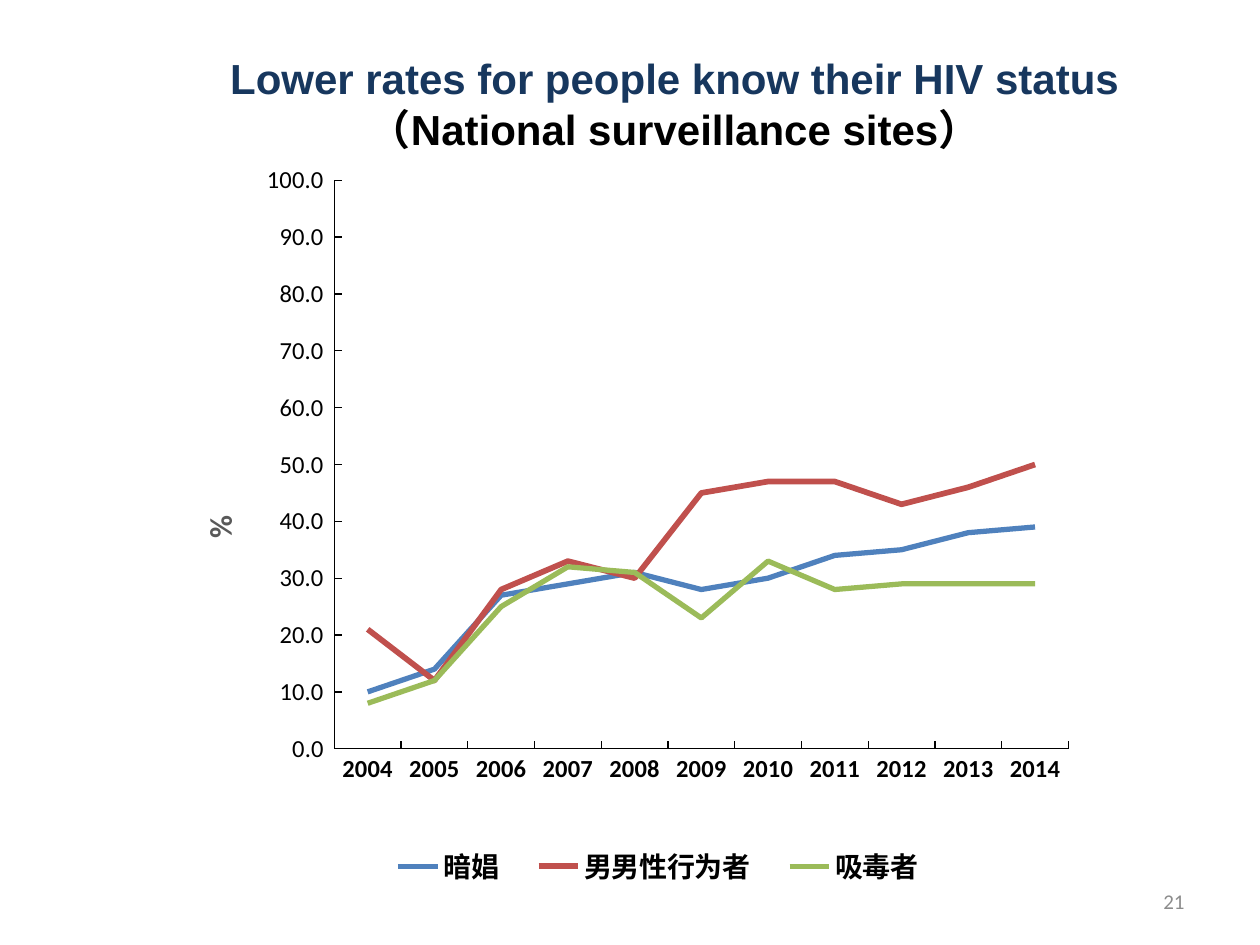
from dataclasses import dataclass

from lxml.etree import SubElement
from pptx import Presentation
from pptx.chart.data import CategoryChartData
from pptx.dml.color import RGBColor
from pptx.enum.chart import XL_CHART_TYPE, XL_LEGEND_POSITION, XL_TICK_MARK
from pptx.enum.text import MSO_ANCHOR, PP_ALIGN
from pptx.oxml import parse_xml
from pptx.oxml.ns import nsdecls, qn
from pptx.util import Inches, Pt


@dataclass(frozen=True)
class Theme:
    heading: str = "17375E"
    ink: str = "000000"
    axis_title: str = "595959"
    page_number: str = "8C8C8C"
    series: tuple = ("4F81BD", "C0504D", "9BBB59")
    title_size: int = 24
    percent_size: int = 18
    legend_size: int = 16
    axis_size: int = 14
    page_size: int = 12
    title_font: str = "Arial"
    body_font: str = "Calibri"
    chinese_font: str = "Noto Sans CJK SC"


def format_font(font, color, **values):
    for name, value in values.items():
        setattr(font, name, value)
    font.color.rgb = RGBColor.from_string(color)


def manual_layout(**values):
    fields = "".join(f'<c:{name} val="{value}"/>' for name, value in values.items())
    return parse_xml(
        f'<c:layout {nsdecls("c")}><c:manualLayout>{fields}</c:manualLayout></c:layout>'
    )


theme = Theme()
presentation = Presentation()
presentation.slide_width = Inches(10)
presentation.slide_height = Inches(7.5)
slide = presentation.slides.add_slide(presentation.slide_layouts[5])

chart_data = CategoryChartData(number_format="0.0_ ")
chart_data.categories = [str(year) for year in range(2004, 2015)]
rates = {
    "暗娼": (10, 14, 27, 29, 31, 28, 30, 34, 35, 38, 39),
    "男男性行为者": (21, 12, 28, 33, 30, 45, 47, 47, 43, 46, 50),
    "吸毒者": (8, 12, 25, 32, 31, 23, 33, 28, 29, 29, 29),
}
for group, values in rates.items():
    chart_data.add_series(group, values)

chart = slide.shapes.add_chart(
    XL_CHART_TYPE.LINE, Inches(1.38), Inches(1.12), Inches(7.32), Inches(6.09), chart_data
).chart
chart.has_title = False
format_font(chart.font, theme.ink, name=theme.body_font, size=Pt(theme.axis_size))
plot = chart.plots[0]
plot.vary_by_categories = False
for series, color, width in zip(plot.series, theme.series, (3, 3.25, 3)):
    series.smooth = False
    series.format.line.color.rgb = RGBColor.from_string(color)
    series.format.line.width = Pt(width)

for axis, bold in ((chart.category_axis, True), (chart.value_axis, False)):
    axis_format = {
        "has_major_gridlines": False,
        "major_tick_mark": XL_TICK_MARK.INSIDE,
        "minor_tick_mark": XL_TICK_MARK.NONE,
    }
    for name, value in axis_format.items():
        setattr(axis, name, value)
    axis.format.line.color.rgb = RGBColor.from_string(theme.ink)
    axis.format.line.width = Pt(0.75)
    format_font(
        axis.tick_labels.font, theme.ink,
        name=theme.body_font, size=Pt(theme.axis_size), bold=bold,
    )

value_axis = chart.value_axis
value_axis.minimum_scale = 0
value_axis.maximum_scale = 100
value_axis.major_unit = 10
value_axis.tick_labels.number_format = "0.0_ "
value_axis.tick_labels.number_format_is_linked = False
percent_frame = value_axis.axis_title.text_frame
percent_frame.text = "%"
format_font(
    percent_frame.paragraphs[0].runs[0].font, theme.axis_title,
    name=theme.body_font, size=Pt(theme.percent_size), bold=True,
)

chart.has_legend = True
legend = chart.legend
legend.position = XL_LEGEND_POSITION.BOTTOM
legend.include_in_layout = False
format_font(
    legend.font, theme.ink, name=theme.chinese_font, size=Pt(theme.legend_size), bold=True
)
for properties in legend._element.iter(qn("a:defRPr")):
    SubElement(properties, qn("a:ea")).set("typeface", theme.chinese_font)

plot_area = chart._chartSpace.chart.plotArea
for layout in plot_area.findall(qn("c:layout")):
    plot_area.remove(layout)
plot_area.insert(0, manual_layout(
    layoutTarget="inner", xMode="edge", yMode="edge", x=0.174, y=0.051, w=0.796, h=0.741
))
title_element = value_axis.axis_title._element
for layout in title_element.findall(qn("c:layout")):
    title_element.remove(layout)
title_element.find(qn("c:tx")).addnext(
    manual_layout(xMode="edge", yMode="edge", x=0.02, y=0.48)
)
for layout in legend._element.findall(qn("c:layout")):
    legend._element.remove(layout)
legend._element.find(qn("c:legendPos")).addnext(
    manual_layout(xMode="edge", yMode="edge", x=0.21, y=0.91, w=0.63, h=0.07)
)

title = slide.shapes.title
title_box = {
    "left": Inches(1.3), "top": Inches(0.37), "width": Inches(8.11), "height": Inches(0.91)
}
for name, value in title_box.items():
    setattr(title, name, value)
title.text_frame.word_wrap = True
title.text_frame.vertical_anchor = MSO_ANCHOR.TOP
title_paragraph = title.text_frame.paragraphs[0]
title_paragraph.alignment = PP_ALIGN.CENTER
for text, color in (
    ("Lower rates for people know their HIV status ", theme.heading),
    ("（National surveillance sites）", theme.ink),
):
    run = title_paragraph.add_run()
    run.text = text
    format_font(
        run.font, color, name=theme.title_font, size=Pt(theme.title_size), bold=True
    )

page_number = slide.shapes.add_textbox(Inches(7.17), Inches(6.95), Inches(2.33), Inches(0.4))
page_number.text_frame.word_wrap = True
page_number.text_frame.vertical_anchor = MSO_ANCHOR.MIDDLE
page_paragraph = page_number.text_frame.paragraphs[0]
page_paragraph.alignment = PP_ALIGN.RIGHT
run = page_paragraph.add_run()
run.text = "21"
format_font(run.font, theme.page_number, name=theme.body_font, size=Pt(theme.page_size))

presentation.save("out.pptx")
